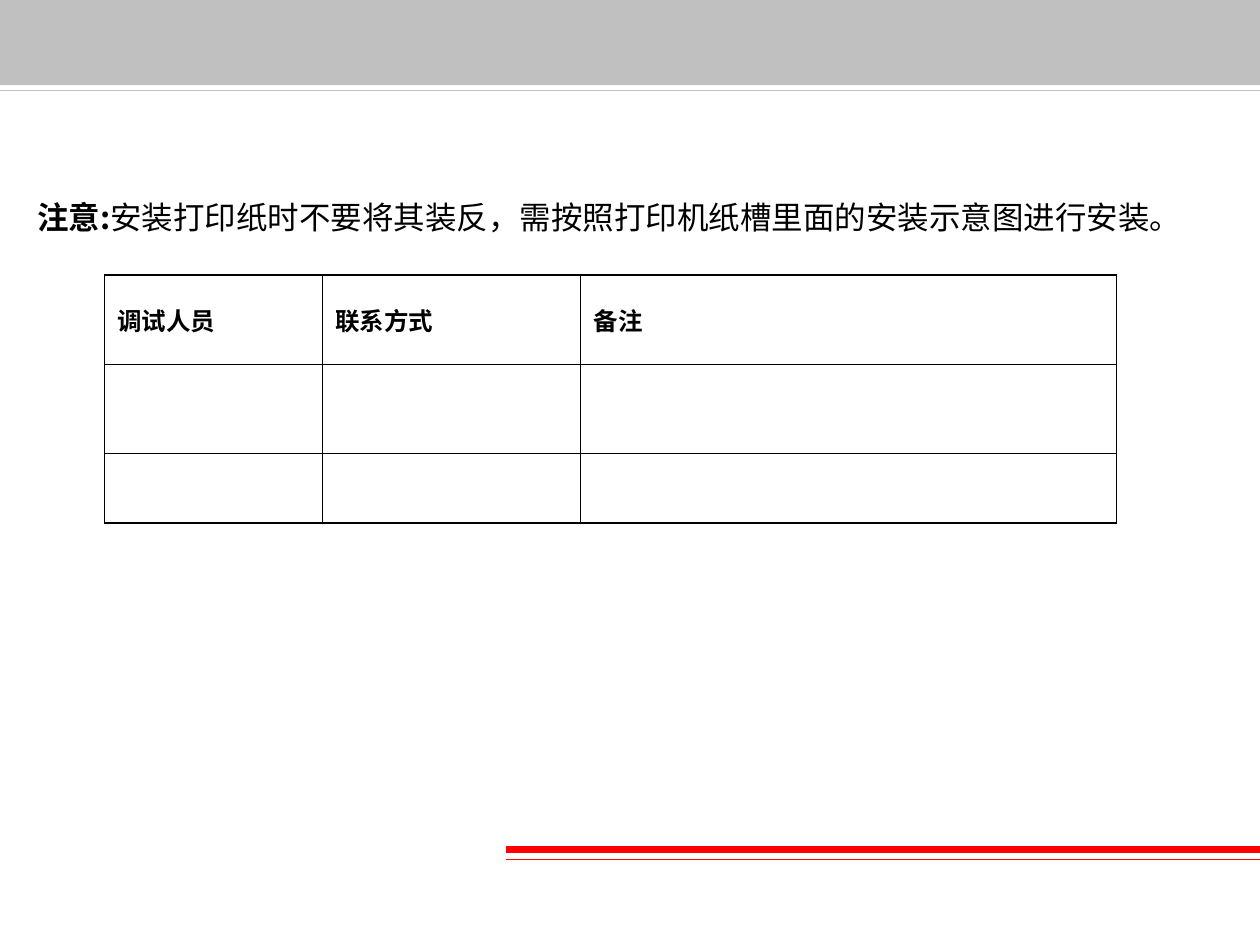
from lxml.etree import SubElement
from pptx import Presentation
from pptx.dml.color import RGBColor as RGB
from pptx.enum.shapes import MSO_CONNECTOR as CONN, MSO_SHAPE as SHAPE
from pptx.enum.text import MSO_ANCHOR as ANCHOR
from pptx.oxml.ns import qn
from pptx.util import Cm, Pt

COLORS = {"band": "C0C0C0", "accent": "FF0000", "text": "000000", "paper": "FFFFFF"}
FONT = "Noto Sans CJK SC"
HEADERS = ["调试人员", "联系方式", "备注"]
COLS = [4.39, 5.21, 10.8]
ROWS = [1.8, 1.8, 1.4]


def color(name):
    """Return the named palette colour."""
    return RGB.from_string(COLORS[name])


def add_run(p, text, **fmt):
    """Append a run of text with the given font values."""
    r = p.add_run()
    r.text = text
    for key, value in {"name": FONT, **fmt}.items():
        setattr(r.font, key, value)
    r.font.color.rgb = color("text")
    SubElement(r.font._element, qn("a:ea"), typeface=FONT)


def add_rule(s, x, y, w, name, weight):
    """Draw a horizontal rule."""
    line = s.shapes.add_connector(CONN.STRAIGHT, Cm(x), Cm(y), Cm(x + w), Cm(y))
    line.line.color.rgb = color(name)
    line.line.width = Pt(weight)
    SubElement(line._element.spPr, qn("a:effectLst"))


def add_header(s, x, y, w, h):
    """Draw the top band and the rule below it."""
    sp = s.shapes.add_shape(SHAPE.RECTANGLE, Cm(x), Cm(y), Cm(w), Cm(h))
    sp.shadow.inherit = False
    sp.fill.solid()
    sp.fill.fore_color.rgb = color("band")
    sp.line.fill.background()
    add_rule(s, x, y + h + 0.1, w, "band", 0.75)


def add_notice(s, x, y, w, h):
    """Write the installation notice."""
    tf = s.shapes.add_textbox(Cm(x), Cm(y), Cm(w), Cm(h)).text_frame
    for key, value in {"word_wrap": True, "vertical_anchor": ANCHOR.MIDDLE}.items():
        setattr(tf, key, value)
    p = tf.paragraphs[0]
    add_run(p, "注意:", size=Pt(18), bold=True)
    add_run(p, "安装打印纸时不要将其装反，需按照打印机纸槽里面的安装示意图进行安装。",
            size=Pt(18), bold=False)


def set_borders(cell, weights):
    """Give each side of a cell a solid line."""
    tcPr = cell._tc.get_or_add_tcPr()
    for i, (side, weight) in enumerate(weights.items()):
        ln = tcPr.makeelement(qn(f"a:ln{side}"), {"w": str(Pt(weight))})
        fill = SubElement(ln, qn("a:solidFill"))
        SubElement(fill, qn("a:srgbClr"), val=COLORS["text"])
        tcPr.insert(i, ln)


def add_contacts(s, x, y):
    """Build the contact table with a heavier outer frame."""
    table = s.shapes.add_table(len(ROWS), len(COLS), Cm(x), Cm(y),
                               Cm(sum(COLS)), Cm(sum(ROWS))).table
    for key in ("first_row", "horz_banding"):
        setattr(table, key, False)
    for col, width in zip(table.columns, COLS):
        col.width = Cm(width)
    last_row, last_col = len(ROWS) - 1, len(COLS) - 1
    for i, height in enumerate(ROWS):
        table.rows[i].height = Cm(height)
        for j, header in enumerate(HEADERS):
            cell = table.cell(i, j)
            cell.fill.solid()
            cell.fill.fore_color.rgb = color("paper")
            cell.vertical_anchor = ANCHOR.MIDDLE
            outer = {"L": j == 0, "R": j == last_col, "T": i == 0, "B": i == last_row}
            set_borders(cell, {k: 1 if edge else 0.5 for k, edge in outer.items()})
            if i == 0:
                add_run(cell.text_frame.paragraphs[0], header, size=Pt(14), bold=True)


def add_footer(s, x, y, w):
    """Draw the thick and thin footer rules."""
    add_rule(s, x, y, w, "accent", 4)
    add_rule(s, x, y + 0.2, w, "accent", 0.75)


def main():
    """Build and save the slide."""
    prs = Presentation()
    prs.slide_width, prs.slide_height = Cm(25.4), Cm(19.05)
    s = prs.slides.add_slide(prs.slide_layouts[6])
    add_header(s, 0, -0.08, 25.4, 1.8)
    add_notice(s, 0.5, 3.72, 24.5, 1.3)
    add_footer(s, 10.2, 17.12, 15.2)
    add_contacts(s, 2.11, 5.54)
    prs.save("out.pptx")


if __name__ == "__main__":
    main()
